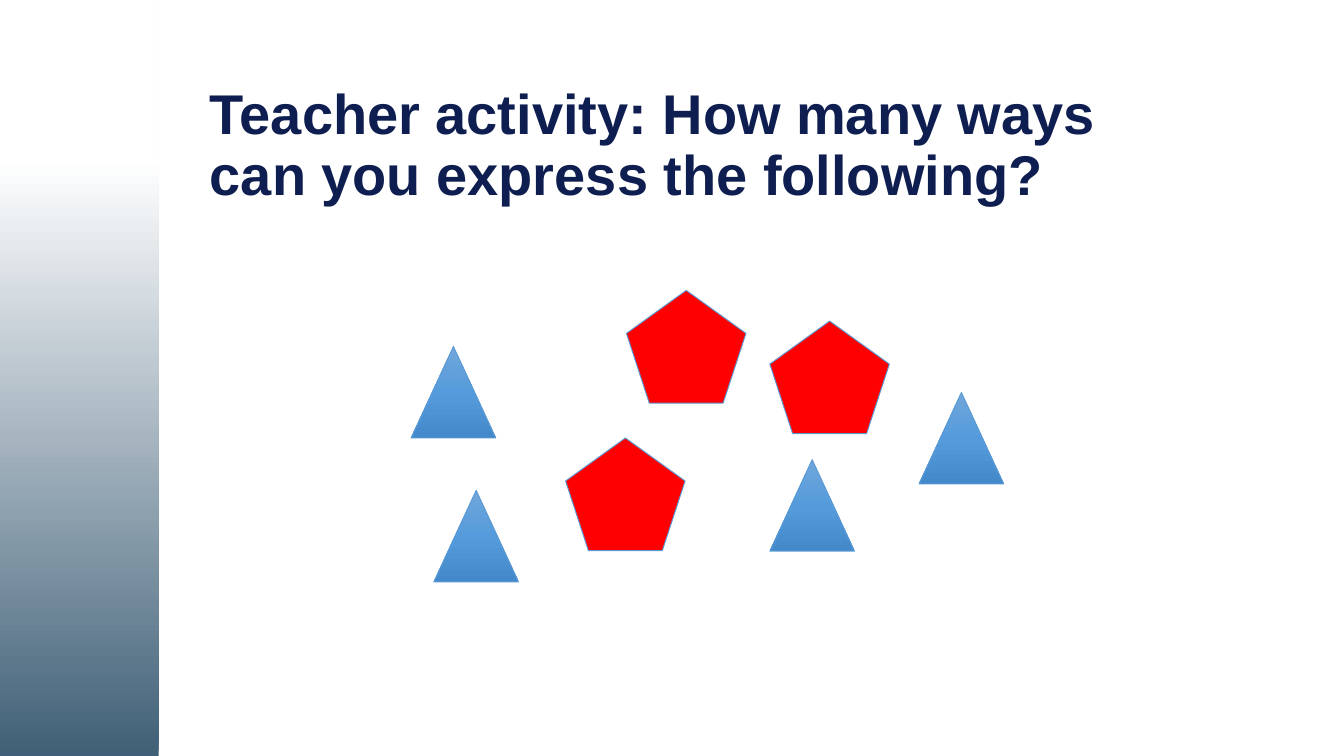
from copy import deepcopy

from pptx import Presentation
from pptx import util as u
from pptx.dml.color import RGBColor
from pptx.enum import shapes, text
from pptx.oxml.ns import qn

NAVY = RGBColor(0x0F, 0x1E, 0x50)
SLATE = RGBColor(0x40, 0x60, 0x77)
WHITE = RGBColor(0xFF, 0xFF, 0xFF)
RED = RGBColor(0xFF, 0x00, 0x00)
OUTLINE = RGBColor(0x5B, 0x9B, 0xD5)
LIGHT_BLUE = RGBColor(0x71, 0xA6, 0xDB)
MID_BLUE = RGBColor(0x55, 0x9B, 0xDB)
DEEP_BLUE = RGBColor(0x44, 0x8A, 0xCA)

WIDTH, HEIGHT = 25.4, 14.29
TRIANGLE_SIZE = (1.6, 1.73)
PENTAGON_SIZE = (2.26, 2.13)
TRIANGLES = [(7.77, 6.55), (14.55, 8.69), (17.37, 7.42), (8.2, 9.27)]
PENTAGONS = [(11.84, 5.49), (14.55, 6.07), (10.69, 8.28)]
BLUE_STOPS = [(0, LIGHT_BLUE), (0.5, MID_BLUE), (1, DEEP_BLUE)]
PANEL_STOPS = [(0, SLATE), (0.79, WHITE)]


class SlideBuilder:
    font = "Arial"
    title_size = u.Pt(30)
    line_width = u.Pt(0.5)

    def __init__(self, slide):
        self.slide = slide

    def title(self, wording, left, top, width, height):
        title = self.slide.shapes.title
        title.left, title.top = u.Cm(left), u.Cm(top)
        title.width, title.height = u.Cm(width), u.Cm(height)
        frame = title.text_frame
        frame.text = wording
        frame.word_wrap = True
        frame.auto_size = text.MSO_AUTO_SIZE.NONE
        frame.vertical_anchor = text.MSO_ANCHOR.MIDDLE
        paragraph = frame.paragraphs[0]
        paragraph.alignment = text.PP_ALIGN.LEFT
        paragraph.line_spacing = 0.9
        font = paragraph.runs[0].font
        font.name, font.size, font.bold = self.font, self.title_size, True
        font.color.rgb = NAVY

    def figure(self, kind, position, size, outlined=True):
        box = [u.Cm(length) for length in (*position, *size)]
        figure = self.slide.shapes.add_shape(kind, *box)
        figure.shadow.inherit = False
        if outlined:
            figure.line.color.rgb = OUTLINE
            figure.line.width = self.line_width
        else:
            figure.line.fill.background()
        return figure

    def solid(self, figure, color):
        figure.fill.solid()
        figure.fill.fore_color.rgb = color

    def gradient(self, figure, stops, angle):
        """Fill with (position, colour) stops; angle runs counter-clockwise."""
        fill = figure.fill
        fill.gradient()
        fill.gradient_angle = angle
        stop_list = figure.element.spPr.find(".//" + qn("a:gsLst"))
        while len(stop_list) < len(stops):
            stop_list.append(deepcopy(stop_list[0]))
        for stop, (position, color) in zip(fill.gradient_stops, stops):
            stop.position = position
            stop.color.rgb = color


def main():
    deck = Presentation()
    deck.slide_width, deck.slide_height = u.Cm(WIDTH), u.Cm(HEIGHT)
    builder = SlideBuilder(deck.slides.add_slide(deck.slide_layouts[5]))

    side_panel = builder.figure(
        shapes.MSO_SHAPE.RECTANGLE, (0, 0), (3, HEIGHT), outlined=False)
    builder.gradient(side_panel, PANEL_STOPS, 90)
    builder.title(
        "Teacher activity: How many ways can you express the following?",
        3.71, 1.47, 18.36, 2.62)

    for position in TRIANGLES:
        triangle = builder.figure(
            shapes.MSO_SHAPE.ISOSCELES_TRIANGLE, position, TRIANGLE_SIZE)
        builder.gradient(triangle, BLUE_STOPS, 270)
    for position in PENTAGONS:
        pentagon = builder.figure(
            shapes.MSO_SHAPE.REGULAR_PENTAGON, position, PENTAGON_SIZE)
        builder.solid(pentagon, RED)

    deck.save("out.pptx")


if __name__ == "__main__":
    main()
